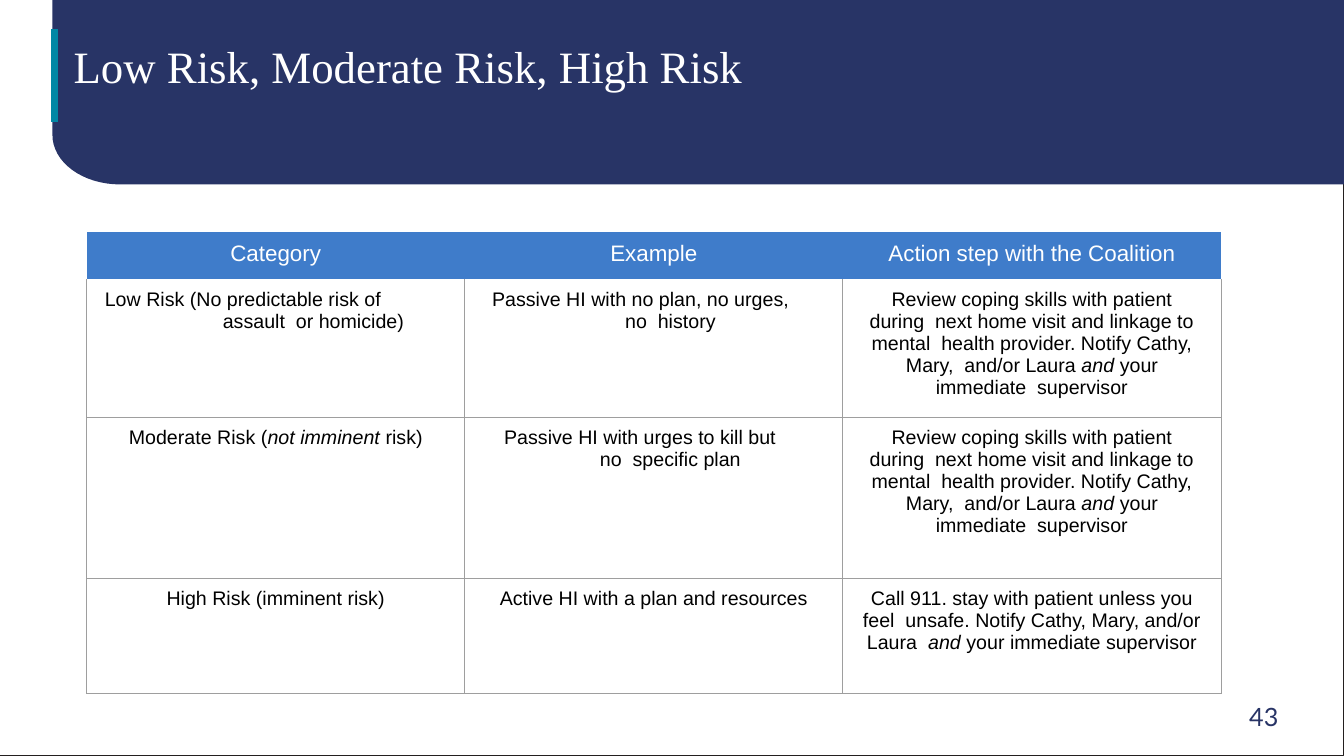
import math
from dataclasses import dataclass

from lxml import etree
from pptx import Presentation
from pptx import util as u
from pptx.dml import color
from pptx.enum import shapes, text
from pptx.oxml import ns


@dataclass(frozen=True)
class Theme:
    navy: str = "283466"
    teal: str = "0287A5"
    blue: str = "3F7CCA"
    grid: str = "9E9E9E"
    frame: str = "231F1F"
    white: str = "FFFFFF"
    black: str = "000000"
    title_font: str = "Times New Roman"
    table_font: str = "Arial"
    number_font: str = "Lato"
    title_size: int = 32
    number_size: int = 18
    header_size: int = 16
    body_size: int = 14


@dataclass(frozen=True)
class Box:
    left: float
    top: float
    width: float
    height: float

    def emu(self):
        return [u.Inches(v) for v in (self.left, self.top, self.width, self.height)]


@dataclass(frozen=True)
class Entry:
    words: str
    left: float = 0
    first: float = 0
    right: float = 0
    centred: bool = True


THEME = Theme()
PLAIN_STYLE = "{2D5ABB26-0587-4C30-8999-92F81FD0307C}"
COPING = Entry(
    "Review coping skills with patient during  next home visit and linkage to mental  "
    "health provider. Notify Cathy, Mary,  and/or Laura *and *your immediate  supervisor",
    left=0.19, right=0.19)
ROWS = [
    [Entry("Category"), Entry("Example"), Entry("Action step with the Coalition")],
    [Entry("Low Risk (No predictable risk of assault  or homicide)", 1.35, -1.17, 0.4, False),
     Entry("Passive HI with no plan, no urges, no  history", 1.59, -1.32, 0.5, False),
     COPING],
    [Entry("Moderate Risk (*not imminent *risk)"),
     Entry("Passive HI with urges to kill but no  specific plan", 1.34, -0.95, 0.6, False),
     COPING],
    [Entry("High Risk (imminent risk)"),
     Entry("Active HI with a plan and resources"),
     Entry("Call 911. stay with patient unless you feel  unsafe. Notify Cathy, Mary, "
           "and/or Laura  *and *your immediate supervisor", left=0.14, right=0.14)],
]
ROW_HEIGHTS = [0.47, 1.37, 1.6, 1.14]


def rgb(value):
    return color.RGBColor.from_string(value)


def set_font(font, name, size, ink):
    font.name = name
    font.size = u.Pt(size)
    font.color.rgb = rgb(ink)


def set_frame(frame, wrap):
    frame.word_wrap = wrap
    frame.auto_size = text.MSO_AUTO_SIZE.NONE
    frame.vertical_anchor = text.MSO_ANCHOR.TOP
    frame.margin_left = frame.margin_right = frame.margin_bottom = 0
    frame.margin_top = u.Inches(0.01)


def add_page_frame(page, box):
    outline = page.shapes.add_shape(shapes.MSO_SHAPE.RECTANGLE, *box.emu())
    outline.shadow.inherit = False
    outline.fill.background()
    outline.line.color.rgb = rgb(THEME.frame)
    outline.line.width = u.Pt(0.75)


def add_header(page, box, title):
    right, bottom = box.left + box.width, box.top + box.height
    radius_x, radius_y, steps = 0.67, 0.49, 16
    angles = [math.pi / 2 * step / steps for step in range(steps + 1)]
    corner = [(box.left + radius_x * (1 - math.sin(angle)),
               bottom - radius_y * (1 - math.cos(angle))) for angle in angles]
    points = [(right, bottom)] + corner + [(box.left, box.top)]
    builder = page.shapes.build_freeform(u.Inches(right), u.Inches(box.top))
    builder.add_line_segments([(u.Inches(x), u.Inches(y)) for x, y in points], close=True)
    band = builder.convert_to_shape()
    band.shadow.inherit = False
    band.fill.solid()
    band.fill.fore_color.rgb = rgb(THEME.navy)
    band.line.fill.background()

    accent_x = u.Inches(box.left + 0.02)
    accent = page.shapes.add_connector(
        shapes.MSO_CONNECTOR.STRAIGHT, accent_x, u.Inches(box.top + 0.29),
        accent_x, u.Inches(box.top + 1.21))
    accent.line.color.rgb = rgb(THEME.teal)
    accent.line.width = u.Pt(4.5)
    etree.SubElement(accent._element.spPr, ns.qn("a:effectLst"))

    heading = page.shapes.title
    page.shapes._spTree.append(heading._element)
    area = Box(box.left + 0.21, box.top + 0.37, 7.17, 0.56)
    heading.left, heading.top, heading.width, heading.height = area.emu()
    set_frame(heading.text_frame, True)
    heading.text_frame.text = title
    para = heading.text_frame.paragraphs[0]
    para.alignment = text.PP_ALIGN.LEFT
    set_font(para.font, THEME.title_font, THEME.title_size, THEME.white)


def draw_borders(cell):
    properties = cell._tc.get_or_add_tcPr()
    for position, side in enumerate(("lnL", "lnR", "lnB")):
        line = etree.Element(ns.qn("a:" + side), w=str(u.Pt(0.75)))
        fill = etree.SubElement(line, ns.qn("a:solidFill"))
        etree.SubElement(fill, ns.qn("a:srgbClr"), val=THEME.grid)
        properties.insert(position, line)


def fill_cell(cell, entry, is_header):
    cell.margin_left = cell.margin_right = cell.margin_bottom = 0
    cell.margin_top = u.Inches(0.09)
    para = cell.text_frame.paragraphs[0]
    para.alignment = text.PP_ALIGN.CENTER if entry.centred else text.PP_ALIGN.LEFT
    for name, length in (("marL", entry.left), ("marR", entry.right), ("indent", entry.first)):
        para._p.get_or_add_pPr().set(name, str(u.Inches(length)))
    for index, words in enumerate(entry.words.split("*")):
        span = para.add_run()
        span.text = words
        if index % 2:
            span.font.italic = True
    if is_header:
        cell.fill.solid()
        cell.fill.fore_color.rgb = rgb(THEME.blue)
        set_font(para.font, THEME.table_font, THEME.header_size, THEME.white)
    else:
        cell.fill.background()
        draw_borders(cell)
        set_font(para.font, THEME.table_font, THEME.body_size, THEME.black)


def add_risk_table(page, box):
    table = page.shapes.add_table(len(ROWS), len(ROWS[0]), *box.emu()).table
    table.horz_banding = False
    table._tbl.tblPr.find(ns.qn("a:tableStyleId")).text = PLAIN_STYLE
    for column in table.columns:
        column.width = u.Inches(box.width / len(ROWS[0]))
    for row_index, entries in enumerate(ROWS):
        table.rows[row_index].height = u.Inches(ROW_HEIGHTS[row_index])
        for column_index, entry in enumerate(entries):
            fill_cell(table.cell(row_index, column_index), entry, row_index == 0)


def add_page_number(page, box, number):
    label = page.shapes.add_textbox(*box.emu())
    set_frame(label.text_frame, False)
    label.text_frame.text = number
    para = label.text_frame.paragraphs[0]
    para._p.get_or_add_pPr().set("marL", str(u.Inches(0.04)))
    set_font(para.font, THEME.number_font, THEME.number_size, THEME.navy)


def main():
    deck = Presentation()
    deck.slide_width, deck.slide_height = u.Inches(13.33), u.Inches(7.5)
    page = deck.slides.add_slide(deck.slide_layouts[5])
    add_page_frame(page, Box(0, 0, 13.33, 7.5))
    add_header(page, Box(0.52, 0, 12.81, 1.83), "Low Risk, Moderate Risk, High Risk")
    add_page_number(page, Box(12.35, 6.95, 0.36, 0.33), "43")
    add_risk_table(page, Box(0.86, 2.3, 11.25, sum(ROW_HEIGHTS)))
    deck.save("out.pptx")


if __name__ == "__main__":
    main()
